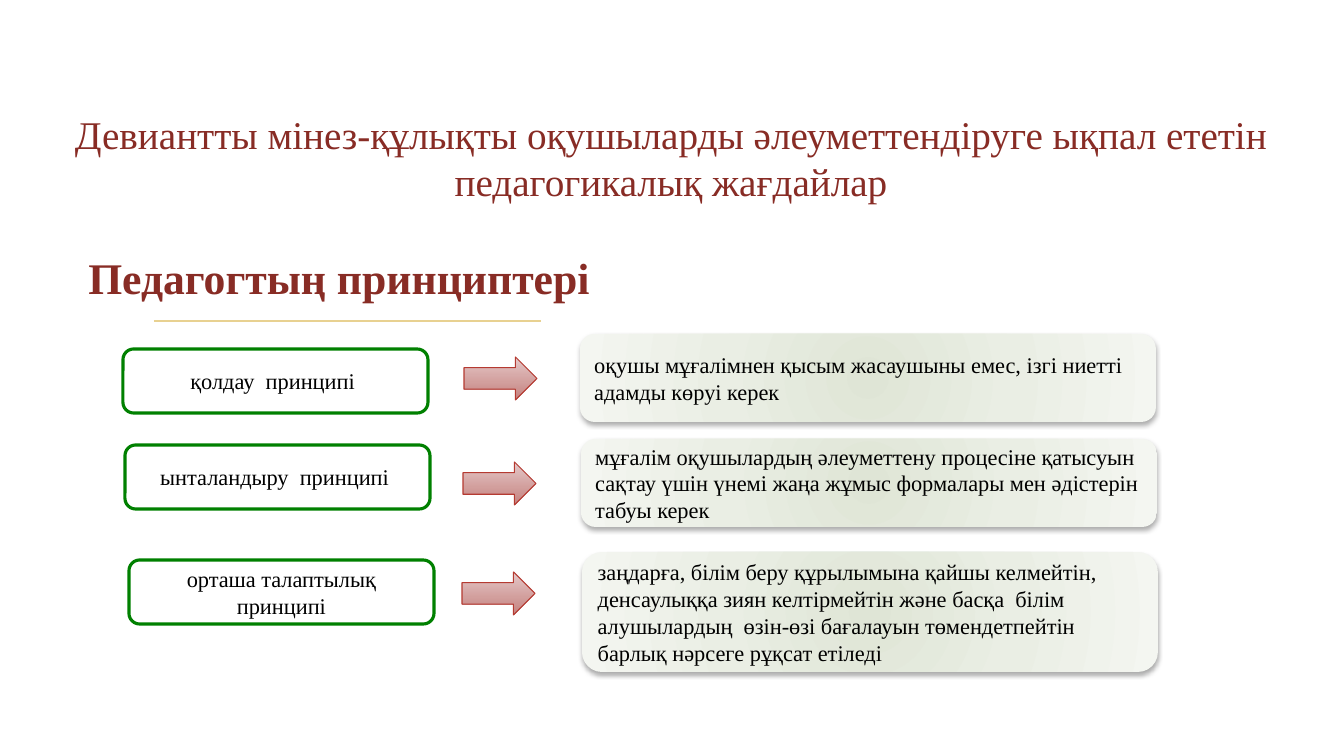
from lxml import etree
from pptx import Presentation
from pptx.dml.color import RGBColor
from pptx.enum.shapes import MSO_CONNECTOR, MSO_SHAPE
from pptx.enum.text import MSO_ANCHOR, PP_ALIGN
from pptx.oxml import parse_xml
from pptx.oxml.ns import qn
from pptx.util import Emu, Pt

LEFT, CENTER = PP_ALIGN.LEFT, PP_ALIGN.CENTER
BOTTOM, MIDDLE = MSO_ANCHOR.BOTTOM, MSO_ANCHOR.MIDDLE
ROUNDED, ARROW = MSO_SHAPE.ROUNDED_RECTANGLE, MSO_SHAPE.RIGHT_ARROW
STRAIGHT = MSO_CONNECTOR.STRAIGHT

# Content
TITLE = "Девиантты мінез-құлықты оқушыларды әлеуметтендіруге ықпал ететін педагогикалық жағдайлар"
SUBTITLE = " Педагогтың принциптері"
# label, label (x, y), arrow (x, y), explanation, card (x, y), card height
PRINCIPLES = [
    ("қолдау  принципі ", (123, 349), (464, 357),
     "оқушы мұғалімнен қысым жасаушыны емес, ізгі ниетті адамды көруі керек",
     (580, 334), 88),
    ("ынталандыру  принципі ", (125, 445), (463, 462),
     "мұғалім оқушылардың әлеуметтену процесіне қатысуын сақтау үшін үнемі жаңа "
     "жұмыс формалары мен әдістерін табуы керек",
     (581, 439), 88),
    ("орташа талаптылық принципі", (129, 560), (462, 572),
     "заңдарға, білім беру құрылымына қайшы келмейтін, денсаулыққа зиян келтірмейтін "
     "және басқа  білім алушылардың  өзін-өзі бағалауын төмендетпейтін барлық нәрсеге "
     "рұқсат етіледі",
     (582, 552), 120),
]

# Style and measures
FONT = "Times New Roman"
COLORS = {"heading": "882C25", "text": "000000", "label": "FFFFFF",
          "label_line": "008000", "arrow_line": "B53A31", "rule": "E8D191"}
CARD_STOPS = [(0, "DFE5D6"), (50, "EAEEE4"), (100, "F4F6F1")]
ARROW_STOPS = [(0, "E4C8C8"), (100, "C5817E")]
RADIAL = '<a:path path="circle"><a:fillToRect l="50000" t="50000" r="50000" b="50000"/></a:path>'
DOWNWARD = '<a:lin ang="5400000" scaled="0"/>'
LABEL_SIZE, ARROW_SIZE, CARD_WIDTH = (305, 64), (73, 43), 576
DRAWING_NS = 'xmlns:a="http://schemas.openxmlformats.org/drawingml/2006/main"'


def px(*lengths):
    return [Emu(round(length * 914400 / 100.8)) for length in lengths]


def rgb(name):
    return RGBColor.from_string(COLORS[name])


def write(shape, text, size=16, color="text", bold=False, align=CENTER, anchor=MIDDLE):
    frame = shape.text_frame
    frame.word_wrap = True
    frame.vertical_anchor = anchor
    paragraph = frame.paragraphs[0]
    paragraph.alignment = align
    run = paragraph.add_run()
    run.text = text
    run.font.name, run.font.size, run.font.bold = FONT, Pt(size), bold
    run.font.color.rgb = rgb(color)


def add_block(kind, place, size, line=None, width=1):
    block = slide.shapes.add_shape(kind, *px(*place, *size))
    block.shadow.inherit = False
    if line:
        block.line.color.rgb = rgb(line)
        block.line.width = Pt(width)
    else:
        block.line.fill.background()
    return block


def fill_gradient(shape, stops, direction):
    shape.fill.background()
    stop_xml = "".join(f'<a:gs pos="{pos * 1000}"><a:srgbClr val="{color}"/></a:gs>'
                       for pos, color in stops)
    gradient = parse_xml(f'<a:gradFill {DRAWING_NS} rotWithShape="1">'
                         f'<a:gsLst>{stop_xml}</a:gsLst>{direction}</a:gradFill>')
    properties = shape.element.spPr
    properties.replace(properties.find(qn("a:noFill")), gradient)


def cast_shadow(shape):
    effects = shape.element.spPr.find(qn("a:effectLst"))
    effects.append(parse_xml(
        f'<a:outerShdw {DRAWING_NS} blurRad="{Pt(3.5)}" dist="{Pt(2.2)}" dir="5400000" '
        'rotWithShape="0"><a:srgbClr val="000000"><a:alpha val="32000"/></a:srgbClr></a:outerShdw>'))


prs = Presentation()
prs.slide_width, prs.slide_height = px(1344, 756)
slide = prs.slides.add_slide(prs.slide_layouts[6])

# Headings and rule
rule = slide.shapes.add_connector(STRAIGHT, *px(154, 321, 541, 321))
rule.line.color.rgb = rgb("rule")
rule.line.width = Pt(1.25)
etree.SubElement(rule.element.spPr, qn("a:effectLst"))

title = slide.shapes.add_textbox(*px(60, 57, 1222, 152))
write(title, TITLE, size=28, color="heading", anchor=BOTTOM)
subtitle = slide.shapes.add_textbox(*px(60, 231, 547, 77))
write(subtitle, SUBTITLE, size=31.2, color="heading", bold=True, anchor=BOTTOM)

# Principles: label, arrow, explanation card
for name, label_at, arrow_at, explanation, card_at, card_height in PRINCIPLES:
    label = add_block(ROUNDED, label_at, LABEL_SIZE, "label_line", 2.25)
    label.fill.solid()
    label.fill.fore_color.rgb = rgb("label")
    write(label, name)

    card = add_block(ROUNDED, card_at, (CARD_WIDTH, card_height))
    fill_gradient(card, CARD_STOPS, RADIAL)
    cast_shadow(card)
    write(card, explanation, align=LEFT)

    arrow = add_block(ARROW, arrow_at, ARROW_SIZE, "arrow_line", 0.75)
    fill_gradient(arrow, ARROW_STOPS, DOWNWARD)

prs.save("out.pptx")
